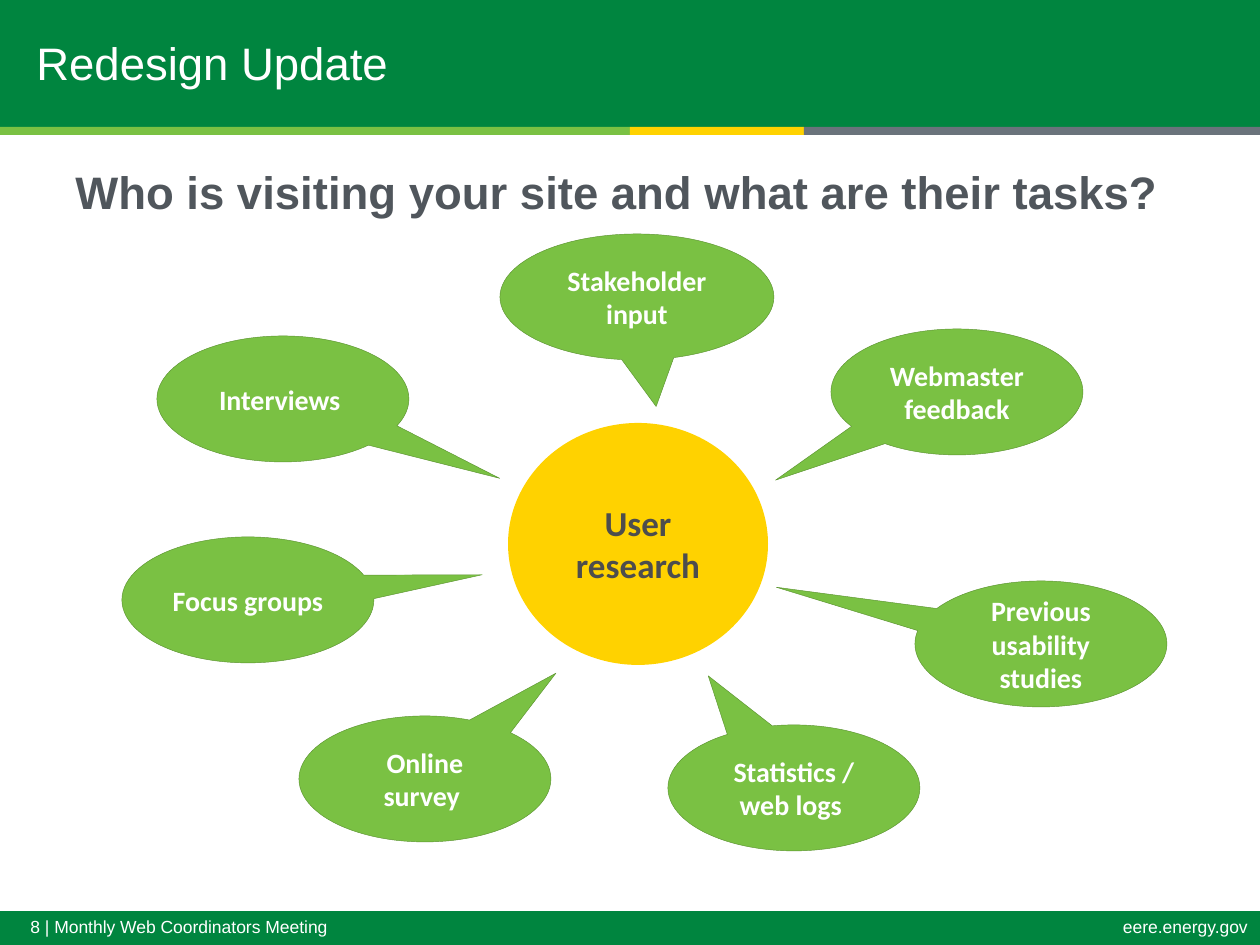
from dataclasses import dataclass
from typing import Any

import pptx
import pptx.dml.color
import pptx.enum.shapes
import pptx.enum.text
import pptx.util

Shapes = pptx.enum.shapes.MSO_SHAPE
Align = pptx.enum.text.PP_ALIGN
Anchor = pptx.enum.text.MSO_ANCHOR
EMU_PER_PX = 914400 / 126


@dataclass(frozen=True)
class Theme:
    green: str = "00853F"
    lime: str = "7AC143"
    yellow: str = "FFD200"
    gray: str = "6A737B"
    outline: str = "5B9330"
    white: str = "FFFFFF"
    heading: str = "50565C"
    hub_text: str = "4D4D4D"
    body_font: str = "Arial"
    diagram_font: str = "Calibri"
    title_size: int = 26
    hub_size: int = 20
    callout_size: int = 16
    footer_size: int = 10
    outline_width: float = 0.25


THEME = Theme()


@dataclass(frozen=True)
class Box:
    left: int
    top: int
    width: int
    height: int


@dataclass(frozen=True)
class Band:
    box: Box
    color: str


@dataclass(frozen=True)
class Label:
    text: str
    box: Box
    size: int
    color: str
    bold: bool = False
    align: Any = Align.LEFT
    anchor: Any = Anchor.TOP
    line_spacing: float = 1.0


@dataclass(frozen=True)
class Callout:
    text: str
    left: int
    top: int
    tip_x: float
    tip_y: float
    width: int = 252
    height: int = 126


BANDS = [
    Band(Box(0, 0, 1260, 127), THEME.green),
    Band(Box(0, 911, 1260, 34), THEME.green),
    Band(Box(0, 127, 630, 8), THEME.lime),
    Band(Box(630, 127, 174, 8), THEME.yellow),
    Band(Box(804, 127, 456, 8), THEME.gray),
]

LABELS = [
    Label("Redesign Update", Box(24, 0, 780, 125), THEME.title_size, THEME.white,
          anchor=Anchor.MIDDLE),
    Label("Who is visiting your site and what are their tasks?", Box(63, 158, 1135, 76),
          THEME.title_size, THEME.heading, bold=True),
    Label("8 | Monthly Web Coordinators Meeting", Box(18, 912, 1004, 33),
          THEME.footer_size, THEME.white, line_spacing=0.9),
    Label("eere.energy.gov", Box(755, 912, 505, 33), THEME.footer_size, THEME.white,
          align=Align.RIGHT, line_spacing=0.9),
]

HUB_BOX = Box(508, 423, 260, 242)

CALLOUTS = [
    Callout("Stakeholder input", 500, 234, 0.07, 0.87, width=274),
    Callout("Webmaster feedback", 831, 329, -0.72, 0.7),
    Callout("Previous usability studies", 915, 581, -1.05, -0.45),
    Callout("Interviews ", 157, 336, 0.86, 0.63),
    Callout("Online survey ", 299, 716, 0.52, -0.84),
    Callout("Statistics / web logs ", 668, 725, -0.34, -0.89),
    Callout("Focus groups ", 122, 537, 0.93, -0.2),
]


def px(length: int) -> pptx.util.Emu:
    return pptx.util.Emu(round(length * EMU_PER_PX))


def rgb(color: str) -> pptx.dml.color.RGBColor:
    return pptx.dml.color.RGBColor.from_string(color)


def place(box: Box) -> tuple:
    return px(box.left), px(box.top), px(box.width), px(box.height)


def apply_format(target: Any, values: dict[str, Any]) -> None:
    for name, value in values.items():
        setattr(target, name, value)


def write_text(shape: Any, lines: list[str], font: dict[str, Any], color: str,
               paragraph_format: dict[str, Any], frame_format: dict[str, Any]) -> None:
    frame = shape.text_frame
    apply_format(frame, {"word_wrap": True, **frame_format})
    for index, line in enumerate(lines):
        paragraph = frame.paragraphs[0] if index == 0 else frame.add_paragraph()
        paragraph.text = line
        apply_format(paragraph, paragraph_format)
        apply_format(paragraph.font, font)
        paragraph.font.color.rgb = rgb(color)


def draw_shape(slide: Any, kind: Any, box: Box, fill: str) -> Any:
    shape = slide.shapes.add_shape(kind, *place(box))
    shape.shadow.inherit = False
    shape.fill.solid()
    shape.fill.fore_color.rgb = rgb(fill)
    shape.line.fill.background()
    return shape


def draw_label(slide: Any, label: Label) -> None:
    shape = slide.shapes.add_textbox(*place(label.box))
    font = {"name": THEME.body_font, "size": pptx.util.Pt(label.size), "bold": label.bold}
    write_text(shape, [label.text], font, label.color,
               {"alignment": label.align, "line_spacing": label.line_spacing},
               {"vertical_anchor": label.anchor})


def draw_diagram_text(shape: Any, lines: list[str], size: int, color: str, inset: int) -> None:
    font = {"name": THEME.diagram_font, "size": pptx.util.Pt(size), "bold": True}
    write_text(shape, lines, font, color, {"alignment": Align.CENTER},
               {"vertical_anchor": Anchor.MIDDLE, "margin_left": px(inset),
                "margin_right": px(inset), "margin_top": 0, "margin_bottom": 0})


def draw_callout(slide: Any, callout: Callout) -> None:
    box = Box(callout.left, callout.top, callout.width, callout.height)
    shape = draw_shape(slide, Shapes.OVAL_CALLOUT, box, THEME.lime)
    shape.adjustments[0] = callout.tip_x
    shape.adjustments[1] = callout.tip_y
    shape.line.color.rgb = rgb(THEME.outline)
    shape.line.width = pptx.util.Pt(THEME.outline_width)
    draw_diagram_text(shape, [callout.text], THEME.callout_size, THEME.white, inset=11)


def main() -> None:
    presentation = pptx.Presentation()
    apply_format(presentation, {"slide_width": px(1260), "slide_height": px(945)})
    slide = presentation.slides.add_slide(presentation.slide_layouts[6])
    for band in BANDS:
        draw_shape(slide, Shapes.RECTANGLE, band.box, band.color)
    for label in LABELS:
        draw_label(slide, label)
    hub = draw_shape(slide, Shapes.OVAL, HUB_BOX, THEME.yellow)
    draw_diagram_text(hub, ["User", "research"], THEME.hub_size, THEME.hub_text, inset=0)
    for callout in CALLOUTS:
        draw_callout(slide, callout)
    presentation.save("out.pptx")


if __name__ == "__main__":
    main()
